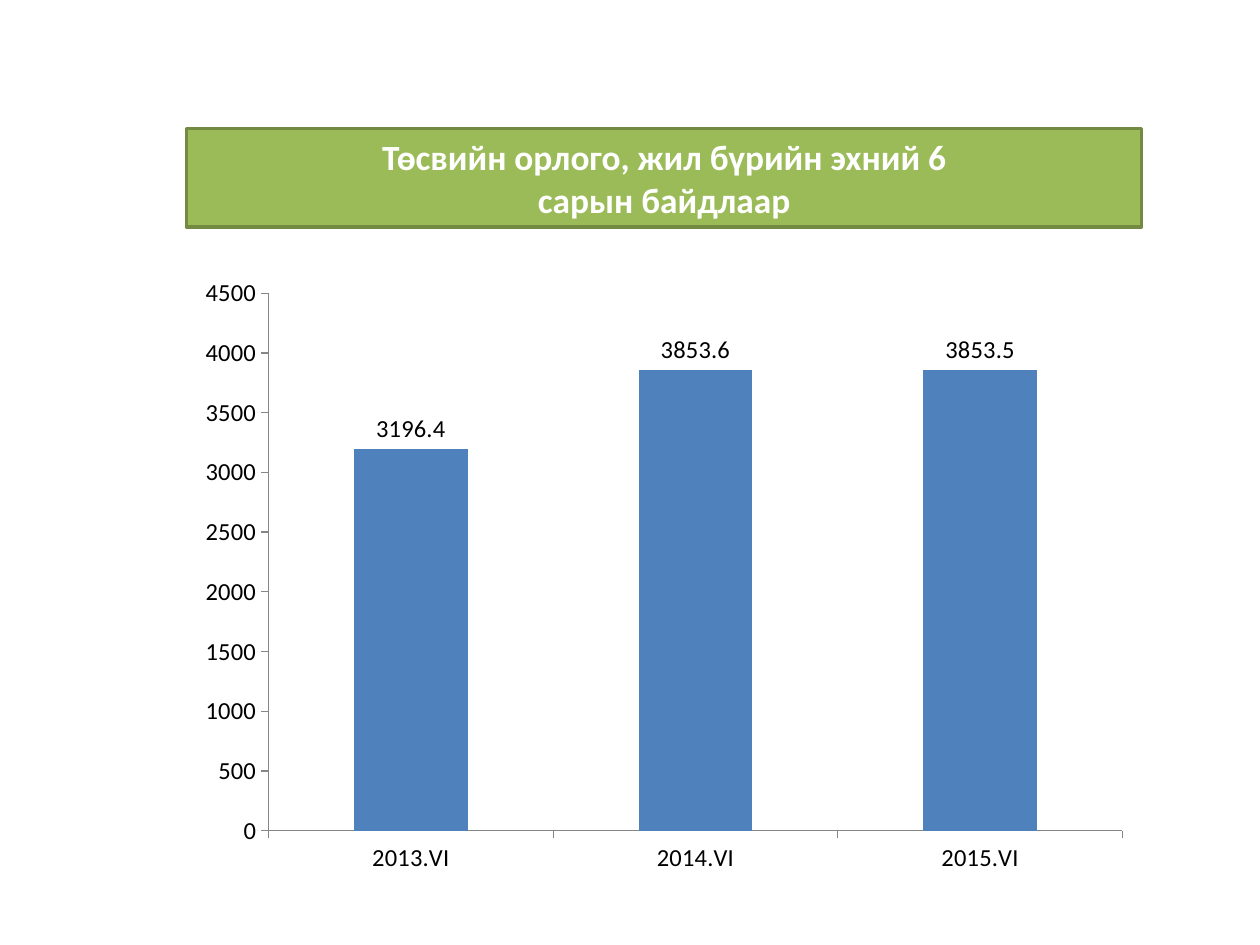
from dataclasses import dataclass

from pptx import Presentation
from pptx.chart.data import CategoryChartData
from pptx.dml.color import RGBColor
from pptx.enum.chart import XL_CHART_TYPE as ChartType
from pptx.enum.chart import XL_LABEL_POSITION as LabelPosition
from pptx.enum.chart import XL_TICK_MARK as TickMark
from pptx.enum.shapes import MSO_SHAPE as ShapeKind
from pptx.enum.text import MSO_ANCHOR as Anchor
from pptx.enum.text import PP_ALIGN as Align
from pptx.util import Inches, Pt


@dataclass(frozen=True)
class Theme:
    """Colours, font and type sizes of the slide."""
    font: str = "Calibri"
    title_size: float = 20.2
    chart_size: float = 14
    title_fill: RGBColor = RGBColor(0x9B, 0xBB, 0x59)
    title_line: RGBColor = RGBColor(0x73, 0x8A, 0x42)
    title_text: RGBColor = RGBColor(0xFF, 0xFF, 0xFF)
    chart_text: RGBColor = RGBColor(0, 0, 0)
    bar: RGBColor = RGBColor(0x4F, 0x81, 0xBD)
    axis: RGBColor = RGBColor(0x86, 0x86, 0x86)


THEME = Theme()
LEFT, WIDTH = Inches(1.48), Inches(7.58)
TITLE = ("Төсвийн орлого, жил бүрийн эхний 6", "сарын байдлаар")
REVENUE = {"2013.VI": 3196.4, "2014.VI": 3853.6, "2015.VI": 3853.5}


def format_font(font, size, color, bold=False):
    """Apply the theme font with a size, colour and weight."""
    font.name = THEME.font
    font.size = Pt(size)
    font.color.rgb = color
    font.bold = bold


def write_text(shape, lines, *, size, color, bold=False, align=Align.CENTER):
    """Write each line as a paragraph in the shape."""
    frame = shape.text_frame
    frame.word_wrap = True
    frame.vertical_anchor = Anchor.MIDDLE
    frame.text = "\n".join(lines)
    for paragraph in frame.paragraphs:
        paragraph.alignment = align
        for run in paragraph.runs:
            format_font(run.font, size, color, bold)


def add_title_box(slide):
    """Add the green title rectangle."""
    shape = slide.shapes.add_shape(
        ShapeKind.RECTANGLE, LEFT, Inches(1.02), WIDTH, Inches(0.78))
    shape.shadow.inherit = False
    shape.fill.solid()
    shape.fill.fore_color.rgb = THEME.title_fill
    shape.line.color.rgb = THEME.title_line
    shape.line.width = Pt(2)
    write_text(shape, TITLE, size=THEME.title_size, color=THEME.title_text, bold=True)


def style_axis(axis):
    """Give an axis its line, outer ticks and no gridlines."""
    axis.has_major_gridlines = False
    axis.major_tick_mark = TickMark.OUTSIDE
    axis.minor_tick_mark = TickMark.NONE
    axis.format.line.color.rgb = THEME.axis
    axis.format.line.width = Pt(0.75)


def add_revenue_chart(slide):
    """Add the column chart of budget revenue."""
    data = CategoryChartData()
    data.categories = list(REVENUE)
    data.add_series("Series 1", list(REVENUE.values()))
    chart = slide.shapes.add_chart(
        ChartType.COLUMN_CLUSTERED, LEFT, Inches(2.11), WIDTH, Inches(4.92), data).chart
    chart.has_legend = False
    chart.has_title = False
    format_font(chart.font, THEME.chart_size, THEME.chart_text)
    for axis in (chart.category_axis, chart.value_axis):
        style_axis(axis)
    chart.value_axis.minimum_scale = 0
    chart.value_axis.maximum_scale = 4500
    chart.value_axis.major_unit = 500

    plot = chart.plots[0]
    plot.gap_width = 150
    plot.vary_by_categories = False
    series = plot.series[0]
    series.format.fill.solid()
    series.format.fill.fore_color.rgb = THEME.bar
    labels = series.data_labels
    labels.show_value = True
    labels.position = LabelPosition.OUTSIDE_END
    format_font(labels.font, THEME.chart_size, THEME.chart_text)


def main():
    """Build and save the slide."""
    presentation = Presentation()
    presentation.slide_width = Inches(10)
    presentation.slide_height = Inches(7.5)
    slide = presentation.slides.add_slide(presentation.slide_layouts[6])
    add_title_box(slide)
    add_revenue_chart(slide)
    presentation.save("out.pptx")


if __name__ == "__main__":
    main()
